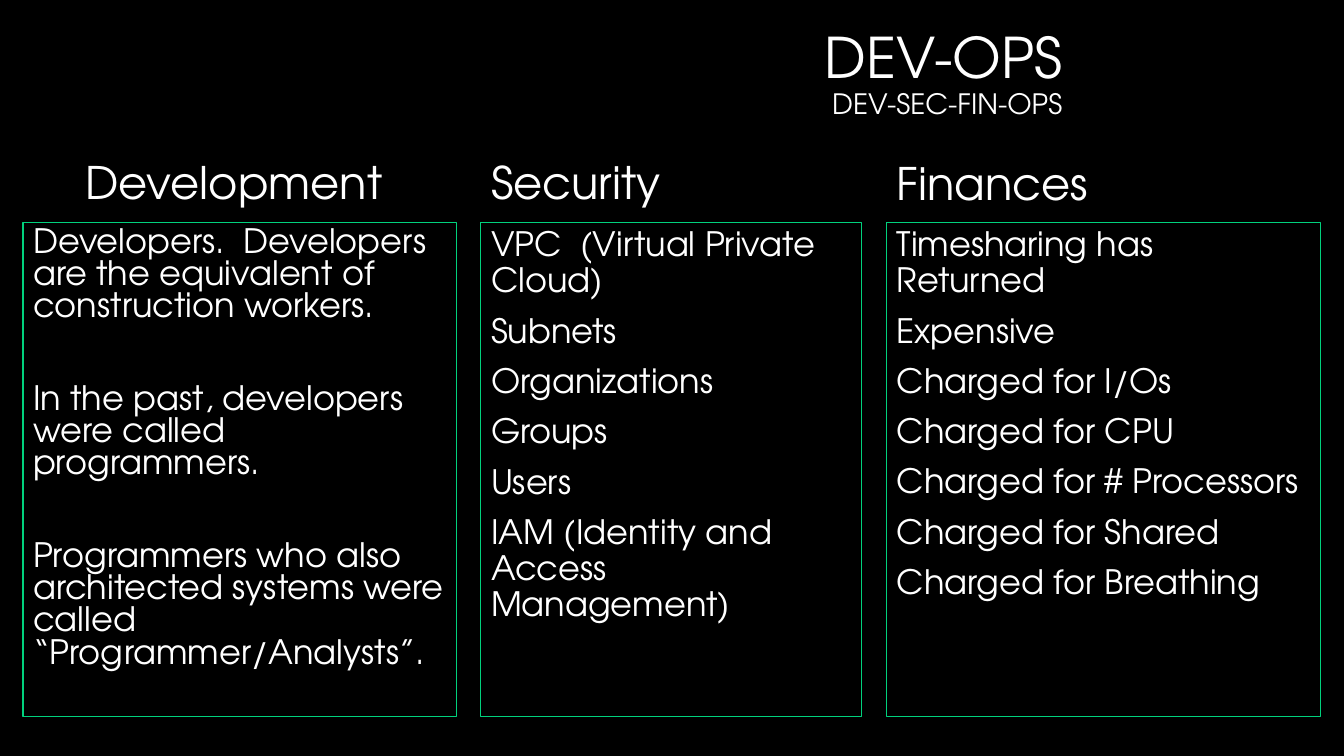
from pptx import Presentation
from pptx.dml.color import RGBColor
from pptx.enum.text import MSO_ANCHOR, MSO_AUTO_SIZE, PP_ALIGN
from pptx.util import Cm, Pt

TITLE, SUBTITLE = "DEV-OPS", "DEV-SEC-FIN-OPS"
FONT, WHITE, BLACK, GREEN = "TeX Gyre Adventor", "FFFFFF", "000000", "01D17D"
HEADING_TOP, HEADING_WIDTH, HEADING_HEIGHT = 3.66, 9.6, 1.75
BOX_TOP, BOX_HEIGHT = 5.61, 12.45

# Lengths in centimetres, paragraph gaps in points
COLUMNS = [
    {
        "heading": "Development", "heading_left": 1.9,
        "left": 0.58, "width": 10.92, "line_spacing": 0.8, "gap": 43,
        "items": [
            "Developers.  Developers are the equivalent of construction workers.",
            "In the past, developers were called programmers.",
            "Programmers who also architected systems were called “Programmer/Analysts”.",
        ],
    },
    {
        "heading": "Security", "heading_left": 12.12,
        "left": 12.12, "width": 9.6, "line_spacing": 0.9, "gap": 10,
        "items": [
            "VPC  (Virtual Private Cloud)", "Subnets", "Organizations",
            "Groups", "Users", "IAM (Identity and Access Management)",
        ],
    },
    {
        "heading": "Finances", "heading_left": 22.35,
        "left": 22.35, "width": 10.92, "line_spacing": 0.9, "gap": 10,
        "items": [
            "Timesharing has Returned", "Expensive", "Charged for I/Os",
            "Charged for CPU", "Charged for # Processors",
            "Charged for Shared", "Charged for Breathing",
        ],
    },
]


def color(value):
    return RGBColor.from_string(value)


def place(shape, left, top, width, height, anchor):
    shape.left, shape.top = Cm(left), Cm(top)
    shape.width, shape.height = Cm(width), Cm(height)
    frame = shape.text_frame
    frame.word_wrap = True
    frame.auto_size = MSO_AUTO_SIZE.NONE
    frame.vertical_anchor = anchor


def style_font(font, size):
    font.name, font.size, font.bold = FONT, Pt(size), False
    font.color.rgb = color(WHITE)


def write_paragraphs(shape, texts, size, line_spacing=0.9, gap=0):
    """Fill the shape with unbulleted paragraphs, gap points apart."""
    frame = shape.text_frame
    for index, text in enumerate(texts):
        paragraph = frame.add_paragraph() if index else frame.paragraphs[0]
        paragraph.text = text
        properties = paragraph._p.get_or_add_pPr()
        properties.set("marL", "0")
        properties.set("indent", "0")
        properties.append(properties.makeelement(
            "{http://schemas.openxmlformats.org/drawingml/2006/main}buNone", {}))
        paragraph.alignment = PP_ALIGN.LEFT
        paragraph.line_spacing = line_spacing
        paragraph.space_before = Pt(gap if index else 0)
        paragraph.space_after = Pt(0)
        style_font(paragraph.font, size)


def add_title(slide):
    title = slide.shapes.title
    place(title, 17.68, 0.08, 9.35, 3.63, MSO_ANCHOR.MIDDLE)
    paragraph = title.text_frame.paragraphs[0]
    paragraph.alignment = PP_ALIGN.RIGHT
    paragraph.line_spacing = 0.9
    for text, size in ((TITLE, 40), (SUBTITLE, 20)):
        if paragraph.runs:
            paragraph.add_line_break()
        run = paragraph.add_run()
        run.text = text
        style_font(run.font, size)


def add_column(column, heading, box):
    place(heading, column["heading_left"], HEADING_TOP,
          HEADING_WIDTH, HEADING_HEIGHT, MSO_ANCHOR.BOTTOM)
    write_paragraphs(heading, [column["heading"]], 32)
    place(box, column["left"], BOX_TOP, column["width"], BOX_HEIGHT, MSO_ANCHOR.TOP)
    box.line.color.rgb = color(GREEN)
    box.line.width = Pt(0.75)
    write_paragraphs(box, column["items"], 24, column["line_spacing"], column["gap"])


def main():
    presentation = Presentation()
    presentation.slide_width, presentation.slide_height = Cm(33.87), Cm(19.05)
    comparison_layout = presentation.slide_layouts[4]
    slide = presentation.slides.add_slide(comparison_layout)
    slide.background.fill.solid()
    slide.background.fill.fore_color.rgb = color(BLACK)
    add_title(slide)

    # The layout holds two heading and list pairs; text boxes make the third
    bodies = list(slide.placeholders)[1:]
    bodies += [slide.shapes.add_textbox(0, 0, 0, 0) for _ in range(2)]
    for column, heading, box in zip(COLUMNS, bodies[::2], bodies[1::2]):
        add_column(column, heading, box)
    presentation.save("out.pptx")


if __name__ == "__main__":
    main()
